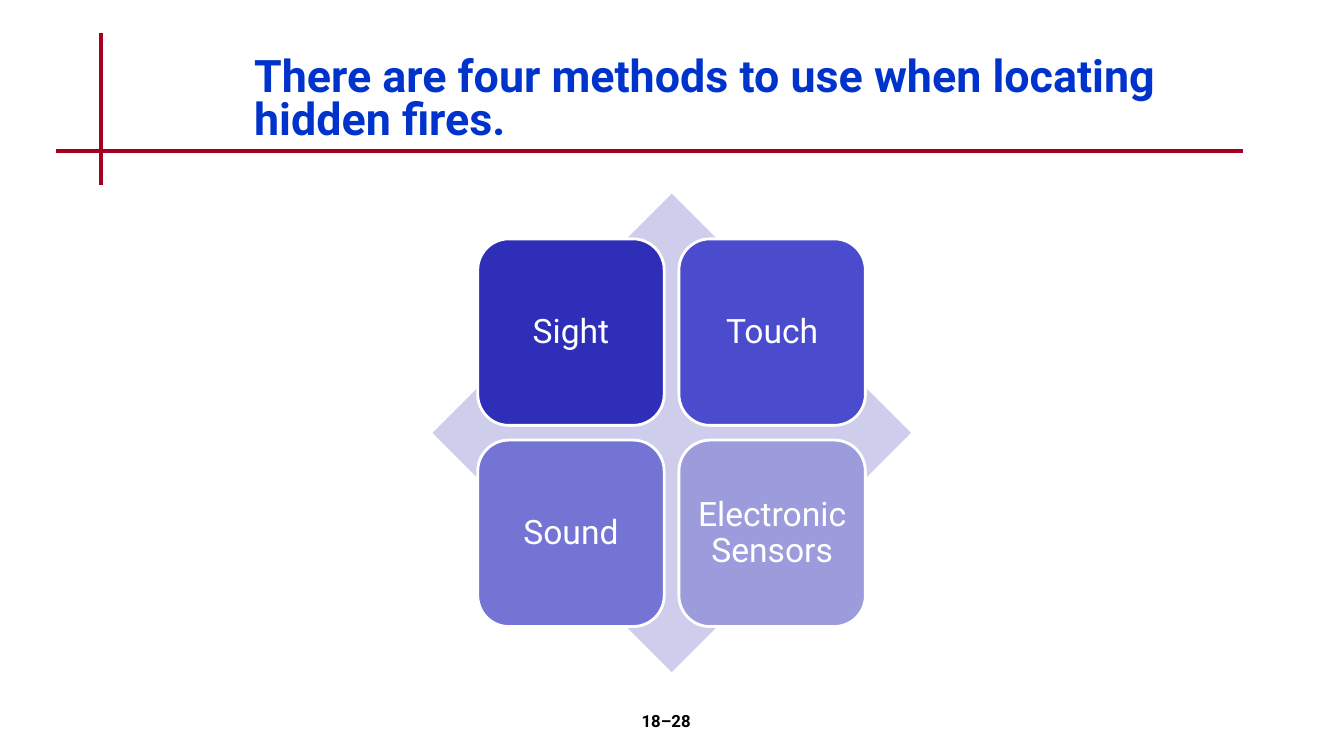
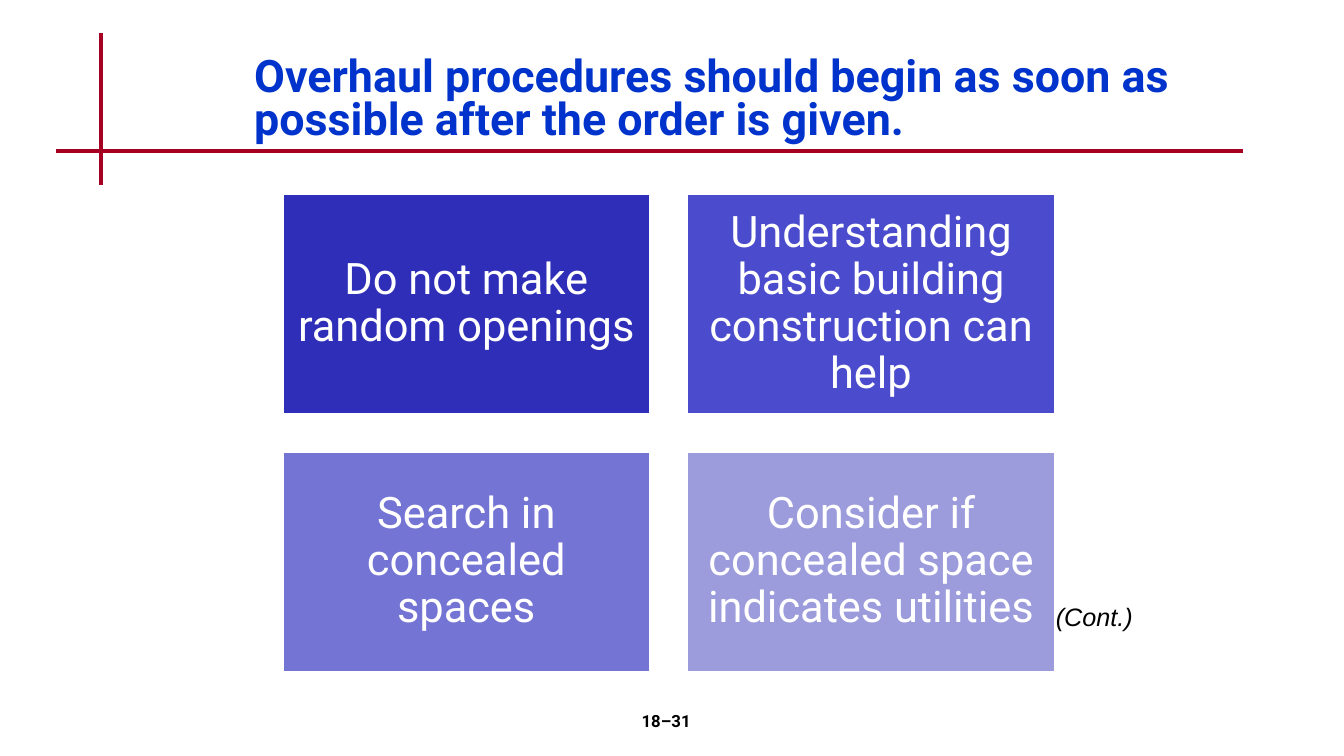
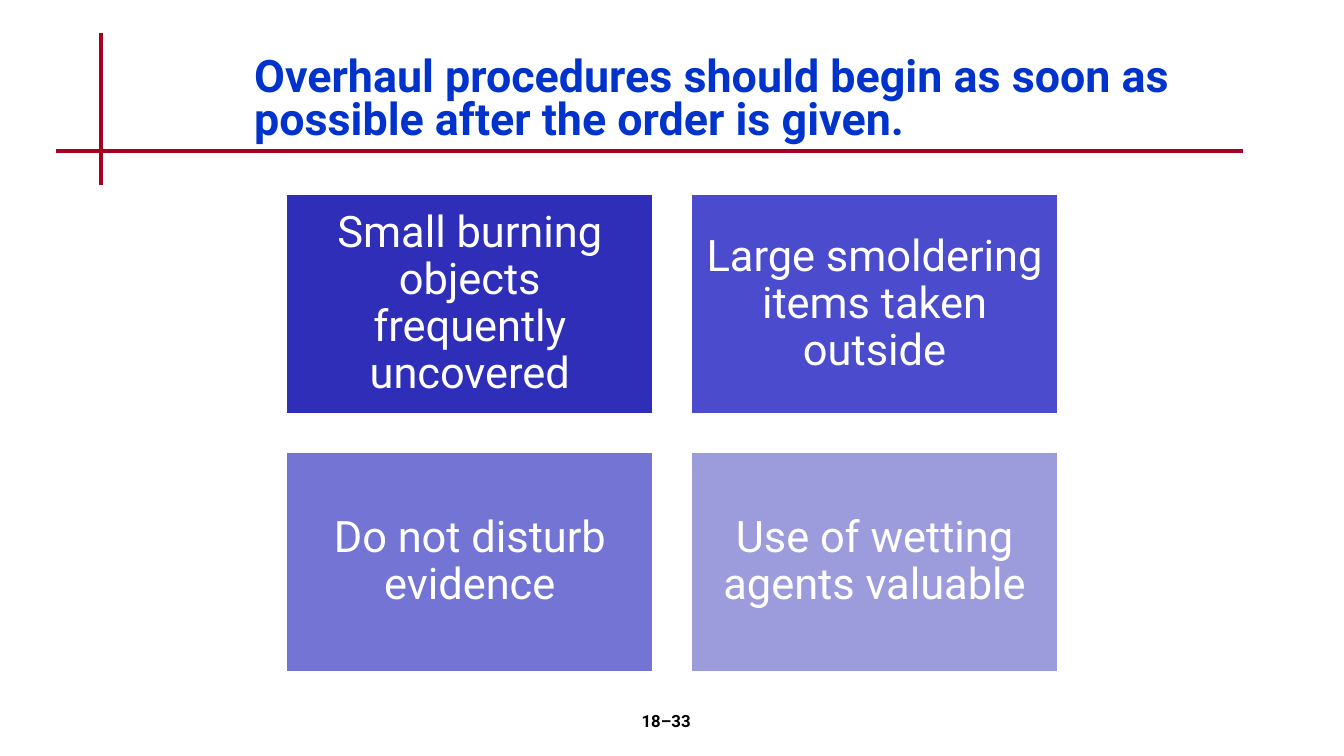
from dataclasses import dataclass

from lxml import etree
from pptx import Presentation
from pptx.dml.color import RGBColor
from pptx.enum.shapes import MSO_CONNECTOR, MSO_SHAPE
from pptx.enum.text import MSO_ANCHOR, MSO_AUTO_SIZE, PP_ALIGN
from pptx.oxml.ns import qn
from pptx.util import Cm, Pt

STRAIGHT = MSO_CONNECTOR.STRAIGHT
DIAMOND, RECTANGLE, ROUNDED = MSO_SHAPE.DIAMOND, MSO_SHAPE.RECTANGLE, MSO_SHAPE.ROUNDED_RECTANGLE
TOP, MIDDLE = MSO_ANCHOR.TOP, MSO_ANCHOR.MIDDLE
LEFT, CENTER, RIGHT = PP_ALIGN.LEFT, PP_ALIGN.CENTER, PP_ALIGN.RIGHT
NO_AUTOFIT = MSO_AUTO_SIZE.NONE

COLORS = {
    "title": "0033CC",
    "rule": "A50021",
    "text": "000000",
    "white": "FFFFFF",
    "diamond": "CECEEC",
}
TILE_COLORS = ("2E2EB9", "4B4BCD", "7474D4", "9C9CDD")
COLUMNS = 2
CONTENT_TOP = 4.88
OVERHAUL_TITLE = "Overhaul procedures should begin as soon as possible after the order is given."


@dataclass(frozen=True)
class Box:
    """A rectangle in centimetres."""
    left: float
    top: float
    width: float
    height: float

    def lengths(self) -> tuple[Cm, Cm, Cm, Cm]:
        return Cm(self.left), Cm(self.top), Cm(self.width), Cm(self.height)


@dataclass(frozen=True)
class TextStyle:
    size: float
    color: str
    font: str = "Roboto"
    bold: bool = False
    italic: bool = False
    align: PP_ALIGN = CENTER
    anchor: MSO_ANCHOR = TOP
    line_spacing: float = 1.0


@dataclass(frozen=True)
class TileGrid:
    """Two by two tiles; lengths in centimetres."""
    shape_type: MSO_SHAPE
    first: Box
    gap: float
    inset: float
    text_size: float


@dataclass(frozen=True)
class MatrixSlide:
    title: str
    title_width: float
    number: str
    grid: TileGrid
    labels: tuple[str, ...]
    has_diamond: bool = False
    continued: bool = False


TITLE_STYLE = TextStyle(32, COLORS["title"], bold=True, align=LEFT, anchor=MIDDLE, line_spacing=0.8)
NUMBER_STYLE = TextStyle(12, COLORS["text"], bold=True)
CONTINUED_STYLE = TextStyle(18, COLORS["text"], font="Arial", italic=True, align=RIGHT)

NUMBER_BOX = Box(13.26, 17.78, 7.06, 1.27)
CONTINUED_BOX = Box(24.56, 15.04, 4.24, 1.02)
DIAMOND_BOX = Box(10.9, CONTENT_TOP, 12.06, 12.06)
RULES = ((2.54, 0.84, 2.54, 4.66), (1.42, 3.81, 31.32, 3.81))


def block_grid(left: float) -> TileGrid:
    return TileGrid(RECTANGLE, Box(left, CONTENT_TOP, 9.28, 5.57), 0.92, 0.33, 31)


SLIDES = (
    MatrixSlide(
        "There are four methods to use when locating hidden fires.", 23.32, "18–28",
        TileGrid(ROUNDED, Box(12.04, 6.02, 4.7, 4.7), 0.37, 0.25, 24),
        ("Sight", "Touch", "Sound", "Electronic Sensors"),
        has_diamond=True,
    ),
    MatrixSlide(
        OVERHAUL_TITLE, 23.67, "18–31", block_grid(7.11),
        (
            "Do not make random openings",
            "Understanding basic building construction can help",
            "Search in concealed spaces",
            "Consider if concealed space indicates utilities",
        ),
        continued=True,
    ),
    MatrixSlide(
        OVERHAUL_TITLE, 23.67, "18–33", block_grid(7.2),
        (
            "Small burning objects frequently uncovered",
            "Large smoldering items taken outside",
            "Do not disturb evidence",
            "Use of wetting agents valuable",
        ),
    ),
)


def write_text(shape, text: str, style: TextStyle) -> None:
    frame = shape.text_frame
    frame.word_wrap = True
    frame.auto_size = NO_AUTOFIT
    frame.vertical_anchor = style.anchor
    paragraph = frame.paragraphs[0]
    paragraph.alignment = style.align
    paragraph.line_spacing = style.line_spacing
    run = paragraph.add_run()
    run.text = text
    run.font.name = style.font
    run.font.size = Pt(style.size)
    run.font.bold = style.bold
    run.font.italic = style.italic
    run.font.color.rgb = RGBColor.from_string(style.color)


def add_text(slide, box: Box, text: str, style: TextStyle) -> None:
    write_text(slide.shapes.add_textbox(*box.lengths()), text, style)


def add_filled_shape(slide, shape_type: MSO_SHAPE, box: Box, fill: str):
    shape = slide.shapes.add_shape(shape_type, *box.lengths())
    shape.shadow.inherit = False
    shape.fill.solid()
    shape.fill.fore_color.rgb = RGBColor.from_string(fill)
    return shape


def add_rules(slide) -> None:
    for ends in RULES:
        rule = slide.shapes.add_connector(STRAIGHT, *(Cm(value) for value in ends))
        rule.line.color.rgb = RGBColor.from_string(COLORS["rule"])
        rule.line.width = Pt(3)
        etree.SubElement(rule.element.spPr, qn("a:effectLst"))


def add_tiles(slide, grid: TileGrid, labels: tuple[str, ...]) -> None:
    style = TextStyle(grid.text_size, COLORS["white"], anchor=MIDDLE, line_spacing=0.9)
    first = grid.first
    for index, (label, color) in enumerate(zip(labels, TILE_COLORS)):
        row, column = divmod(index, COLUMNS)
        box = Box(
            first.left + column * (first.width + grid.gap),
            first.top + row * (first.height + grid.gap),
            first.width,
            first.height,
        )
        tile = add_filled_shape(slide, grid.shape_type, box, color)
        tile.line.color.rgb = RGBColor.from_string(COLORS["white"])
        tile.line.width = Pt(2)
        frame = tile.text_frame
        frame.margin_left = frame.margin_right = Cm(grid.inset)
        frame.margin_top = frame.margin_bottom = Cm(grid.inset)
        write_text(tile, label, style)


def add_matrix_slide(presentation, content: MatrixSlide) -> None:
    title_only = presentation.slide_layouts.get_by_name("Title Only")
    slide = presentation.slides.add_slide(title_only)
    add_rules(slide)
    title = slide.shapes.title
    title.left, title.top, title.width, title.height = Box(
        6.15, 1.27, content.title_width, 2.54).lengths()
    write_text(title, content.title, TITLE_STYLE)
    add_text(slide, NUMBER_BOX, content.number, NUMBER_STYLE)
    if content.has_diamond:
        diamond = add_filled_shape(slide, DIAMOND, DIAMOND_BOX, COLORS["diamond"])
        diamond.line.fill.background()
    add_tiles(slide, content.grid, content.labels)
    if content.continued:
        add_text(slide, CONTINUED_BOX, "(Cont.)", CONTINUED_STYLE)


def main() -> None:
    presentation = Presentation()
    presentation.slide_width = Cm(33.87)
    presentation.slide_height = Cm(19.05)
    for content in SLIDES:
        add_matrix_slide(presentation, content)
    presentation.save("out.pptx")


if __name__ == "__main__":
    main()
